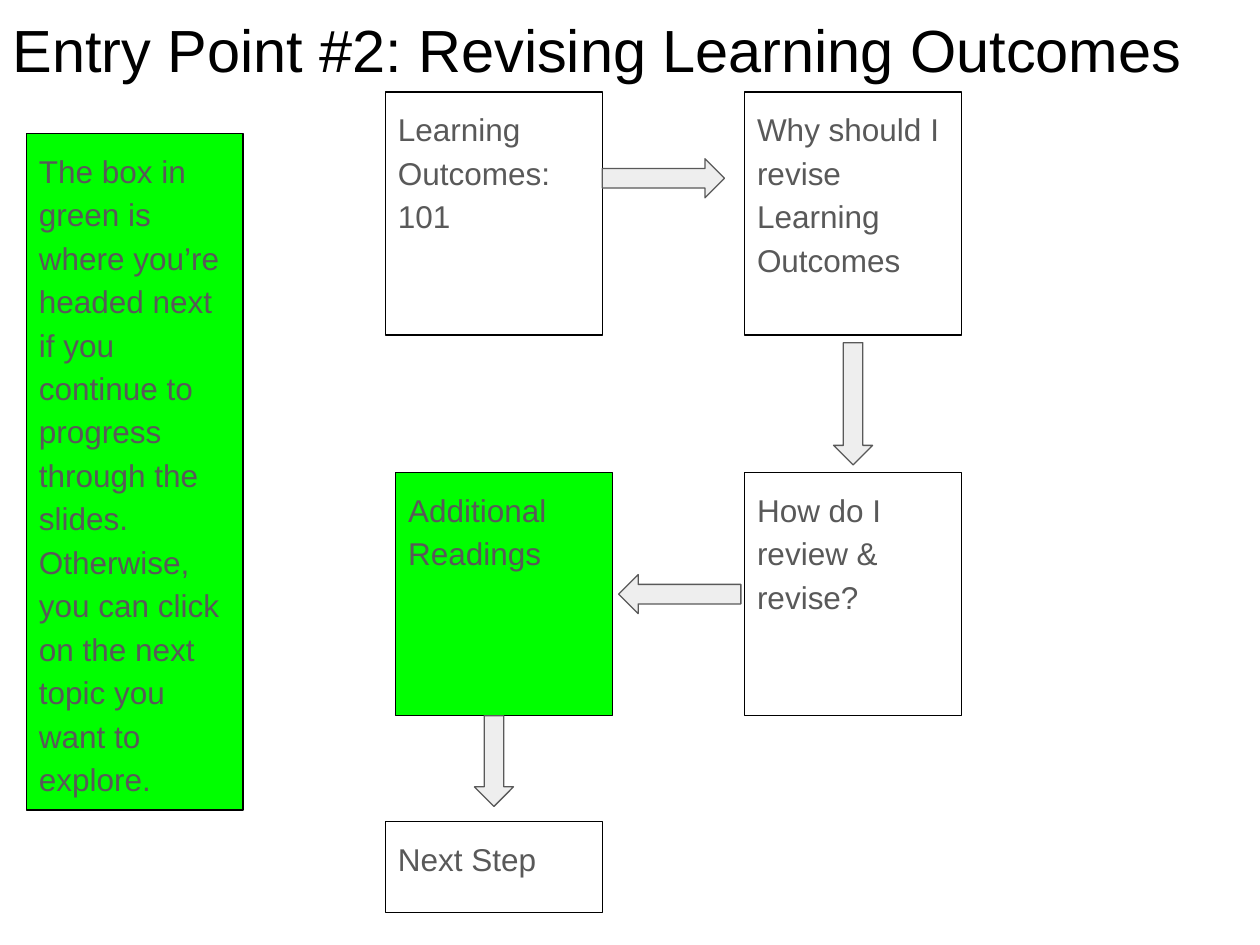
from pptx import Presentation
from pptx.dml.color import RGBColor
from pptx.enum.shapes import MSO_SHAPE
from pptx.enum.text import MSO_ANCHOR, MSO_AUTO_SIZE, PP_ALIGN
from pptx.util import Inches, Pt

COLORS = {"black": "000000", "text": "595959", "green": "00FF00", "arrow": "EEEEEE"}
COLUMNS, ROWS = 100, 75


class FlowPage:
    """Style and current slide; lengths are grid columns and rows."""

    font_name = "Arial"
    inset = Inches(0.1)
    line_width = Pt(0.75)
    arrow_height = 3.1

    def __init__(self, deck):
        self.page = deck.slides.add_slide(deck.slide_layouts[5])
        self.column = deck.slide_width / COLUMNS
        self.row = deck.slide_height / ROWS

    def frame(self, left, top, width, height):
        return (round(left * self.column), round(top * self.row),
                round(width * self.column), round(height * self.row))

    def color(self, name):
        return RGBColor.from_string(COLORS[name])

    def set_text(self, shape, text, size, color):
        frame = shape.text_frame
        frame.text = text
        frame.word_wrap = True
        frame.vertical_anchor = MSO_ANCHOR.TOP
        frame.margin_left = frame.margin_right = self.inset
        frame.margin_top = frame.margin_bottom = self.inset
        para = frame.paragraphs[0]
        para.alignment = PP_ALIGN.LEFT
        font = para.runs[0].font
        font.name, font.size = self.font_name, Pt(size)
        font.color.rgb = self.color(color)
        return para

    def shape(self, kind, frame, fill, line):
        shape = self.page.shapes.add_shape(kind, *self.frame(*frame))
        shape.shadow.inherit = False
        if fill:
            shape.fill.solid()
            shape.fill.fore_color.rgb = self.color(fill)
        else:
            shape.fill.background()
        shape.line.color.rgb = self.color(line)
        shape.line.width = self.line_width
        return shape

    def title(self, text, *frame):
        title = self.page.shapes.title
        title.left, title.top, title.width, title.height = self.frame(*frame)
        self.set_text(title, text, 34, "black")
        title.text_frame.auto_size = MSO_AUTO_SIZE.SHAPE_TO_FIT_TEXT

    def box(self, text, *frame, fill=None):
        box = self.shape(MSO_SHAPE.RECTANGLE, frame, fill, "black")
        para = self.set_text(box, text, 18, "text")
        para.line_spacing = 1.15
        para.space_after = Pt(12)

    def arrow(self, center_x, center_y, length, turn=0):
        frame = (center_x - length / 2, center_y - self.arrow_height / 2,
                 length, self.arrow_height)
        arrow = self.shape(MSO_SHAPE.RIGHT_ARROW, frame, "arrow", "text")
        arrow.rotation = turn


def main():
    deck = Presentation()
    deck.slide_width, deck.slide_height = Inches(10), Inches(7.5)
    flow = FlowPage(deck)
    flow.title("Entry Point #2: Revising Learning Outcomes", 0, 0, 97.5, 7.7)

    # Topic boxes
    box_width, box_height = 17.2, 19.3
    left, right = 30.6, 59.1
    upper, lower = 7.3, 37.5
    topics = [
        ("Learning Outcomes: 101", left, upper, None),
        ("Why should I revise Learning Outcomes", right, upper, None),
        ("How do I review & revise?", right, lower, None),
        ("Additional Readings", left + 0.8, lower, "green"),
    ]
    for text, column, row, fill in topics:
        flow.box(text, column, row, box_width, box_height, fill=fill)
    flow.box("Next Step", left, 65.2, box_width, 7.2)

    # Reading guide
    flow.box("The box in green is where you’re headed next if you continue to "
             "progress through the slides. Otherwise, you can click on the next "
             "topic you want to explore.",
             2.1, 10.6, box_width, 53.7, fill="green")

    # Arrows along the path
    long, short = 9.7, 7.2
    flow.arrow(left + box_width + long / 2, 14.15, long)
    flow.arrow(right + box_width / 2, (upper + box_height + lower) / 2, long, turn=90)
    flow.arrow(53.95, lower + box_height / 2, long, turn=180)
    flow.arrow(left + box_width / 2, lower + box_height + short / 2, short, turn=90)

    deck.save("out.pptx")


if __name__ == "__main__":
    main()
